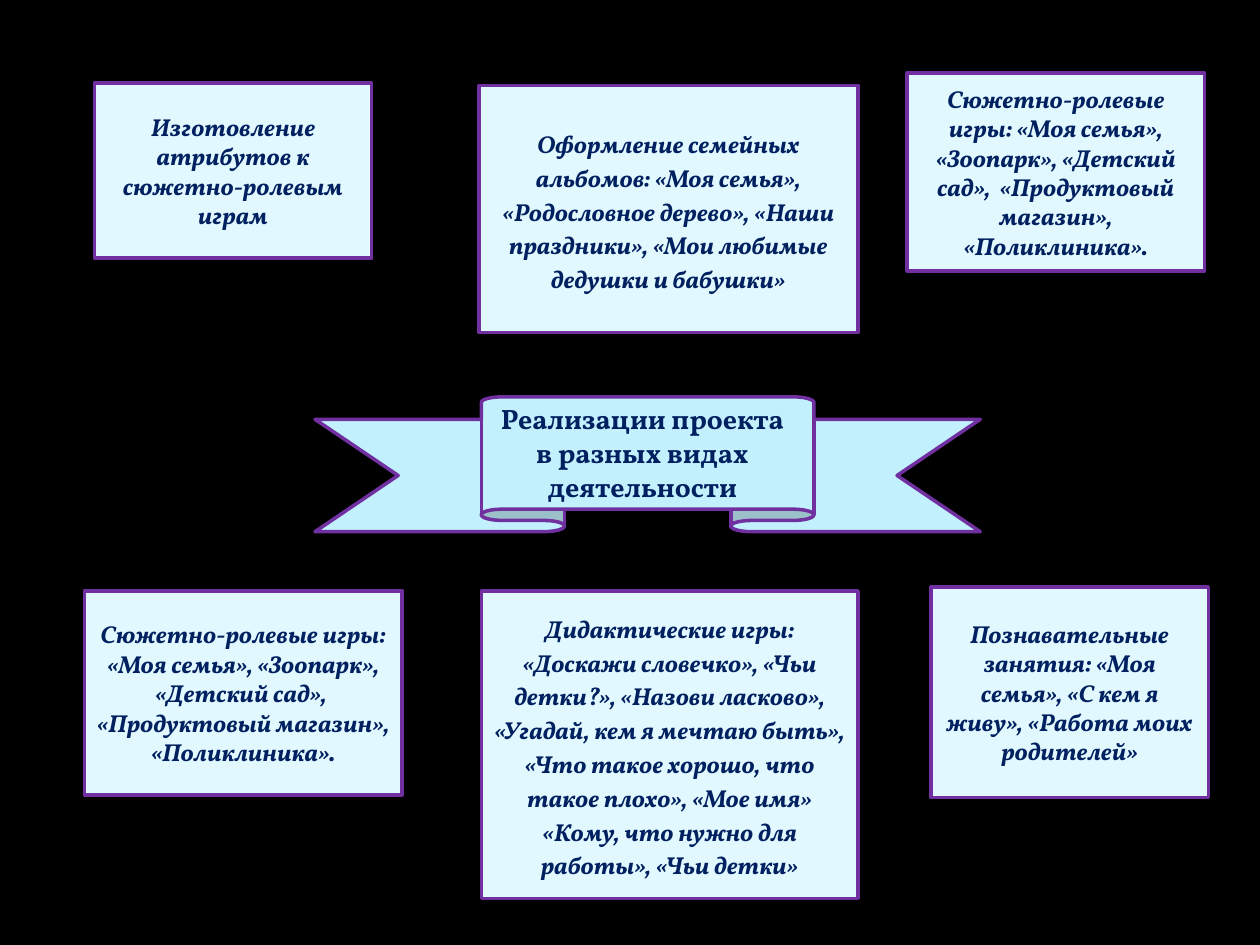
"""Build a slide of six activity cards around a ribbon title."""
import pptx
import pptx.util
import pptx.dml.color
import pptx.enum.shapes
import pptx.enum.text

Inches, Pt = pptx.util.Inches, pptx.util.Pt
KINDS = pptx.enum.shapes.MSO_SHAPE
ANCHOR = pptx.enum.text.MSO_ANCHOR

HEAD = "Реализации проекта в разных видах деятельности"
ROLES = ("Сюжетно-ролевые игры: «Моя семья», «Зоопарк», «Детский сад»,  "
         "«Продуктовый магазин», «Поликлиника».")
LOOSE = {"space": 1.15, "after": 10}
CARDS = [
    ((0.75, 0.66, 2.2, 1.39), "Изготовление атрибутов к сюжетно-ролевым играм", {}),
    ((3.8, 0.68, 3.01, 1.96),
     "Оформление семейных альбомов: «Моя семья», «Родословное дерево», "
     "«Наши праздники», «Мои любимые дедушки и бабушки»", LOOSE),
    ((7.2, 0.58, 2.36, 1.57), ROLES, {}),
    ((0.67, 4.69, 2.52, 1.62), ROLES, {}),
    ((3.82, 4.69, 2.99, 2.44),
     "Дидактические игры: «Доскажи словечко», «Чьи детки?», «Назови ласково», "
     "«Угадай, кем я мечтаю быть», «Что такое хорошо, что такое плохо», "
     "«Мое имя» «Кому, что нужно для работы», «Чьи детки»", LOOSE),
    ((7.39, 4.66, 2.2, 1.67),
     "Познавательные занятия: «Моя семья», «С кем я живу», "
     "«Работа моих родителей»", {}),
]


def color(code):
    return pptx.dml.color.RGBColor.from_string(code)


def write(shape, text, size=14, italic=True, anchor=ANCHOR.MIDDLE, space=None, after=None):
    frame = shape.text_frame
    frame.word_wrap = True
    frame.auto_size = pptx.enum.text.MSO_AUTO_SIZE.NONE
    frame.vertical_anchor = anchor
    para = frame.paragraphs[0]
    para.alignment = pptx.enum.text.PP_ALIGN.CENTER
    if space:
        para.line_spacing = space
    if after:
        para.space_after = Pt(after)
    run = para.add_run()
    run.text = text
    font = run.font
    font.name, font.size = "Vollkorn", Pt(size)
    font.bold, font.italic = True, italic
    font.color.rgb = color("002060")


def draw(slide, kind, box, fill):
    shape = slide.shapes.add_shape(kind, *map(Inches, box))
    shape.shadow.inherit = False
    shape.fill.solid()
    shape.fill.fore_color.rgb = color(fill)
    shape.line.color.rgb = color("7030A0")
    shape.line.width = Pt(2)
    return shape


def main():
    deck = pptx.Presentation()
    deck.slide_width, deck.slide_height = Inches(10), Inches(7.5)
    slide = deck.slides.add_slide(deck.slide_layouts[5])
    back = slide.background.fill
    back.solid()
    back.fore_color.rgb = color("000000")

    ribbon = draw(slide, KINDS.UP_RIBBON, (2.5, 3.15, 5.28, 1.07), "C3F0FD")
    title = slide.shapes.title
    title.left, title.top, title.width, title.height = map(Inches, (3.8, 3.14, 2.6, 0.91))
    write(title, HEAD, size=16, italic=False, anchor=ANCHOR.TOP)
    ribbon._element.addnext(title._element)

    for box, text, form in CARDS:
        write(draw(slide, KINDS.RECTANGLE, box, "E1F8FE"), text, **form)
    deck.save("out.pptx")


if __name__ == "__main__":
    main()
